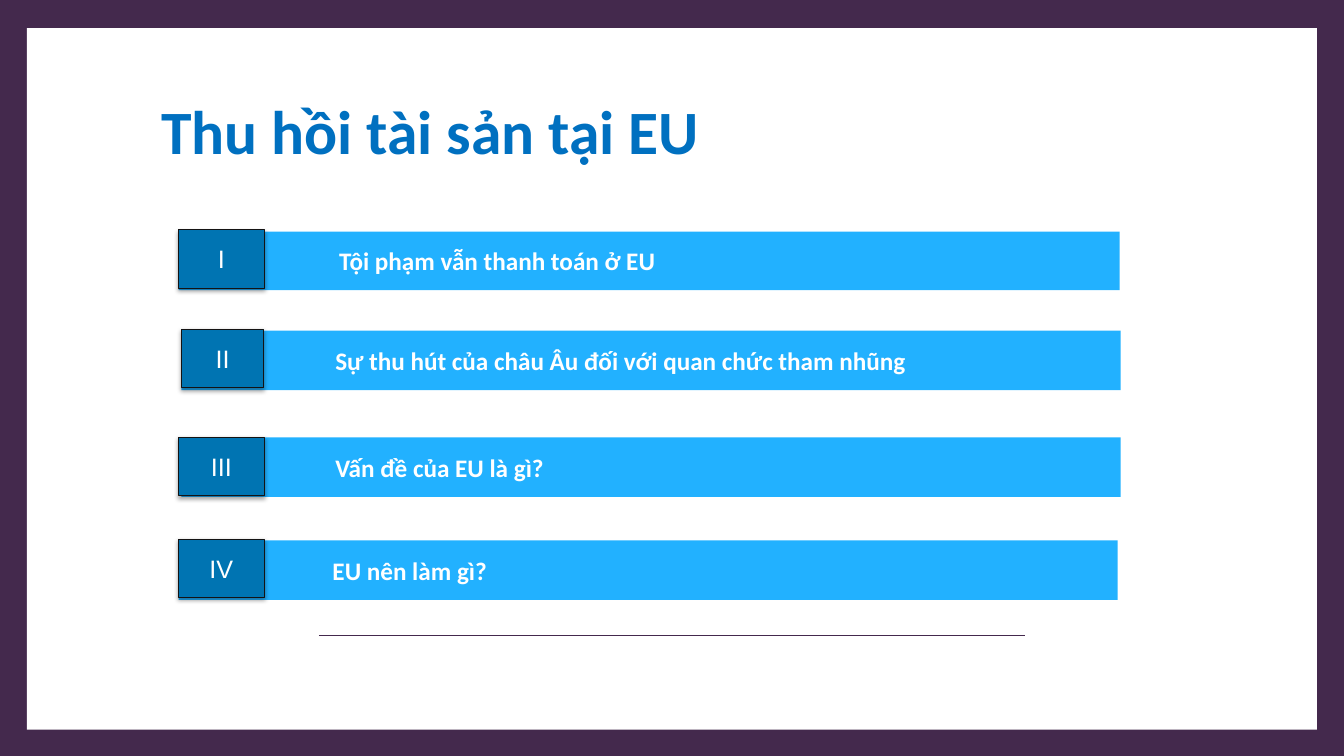
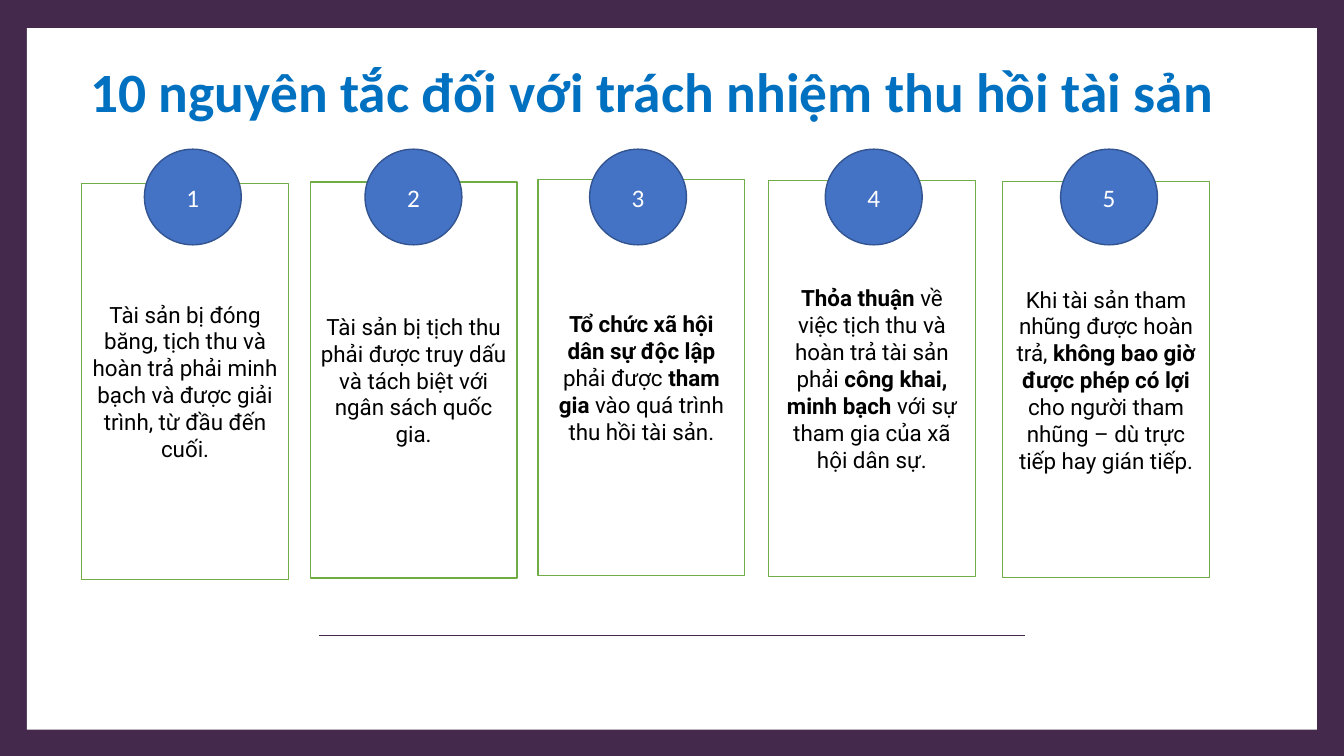
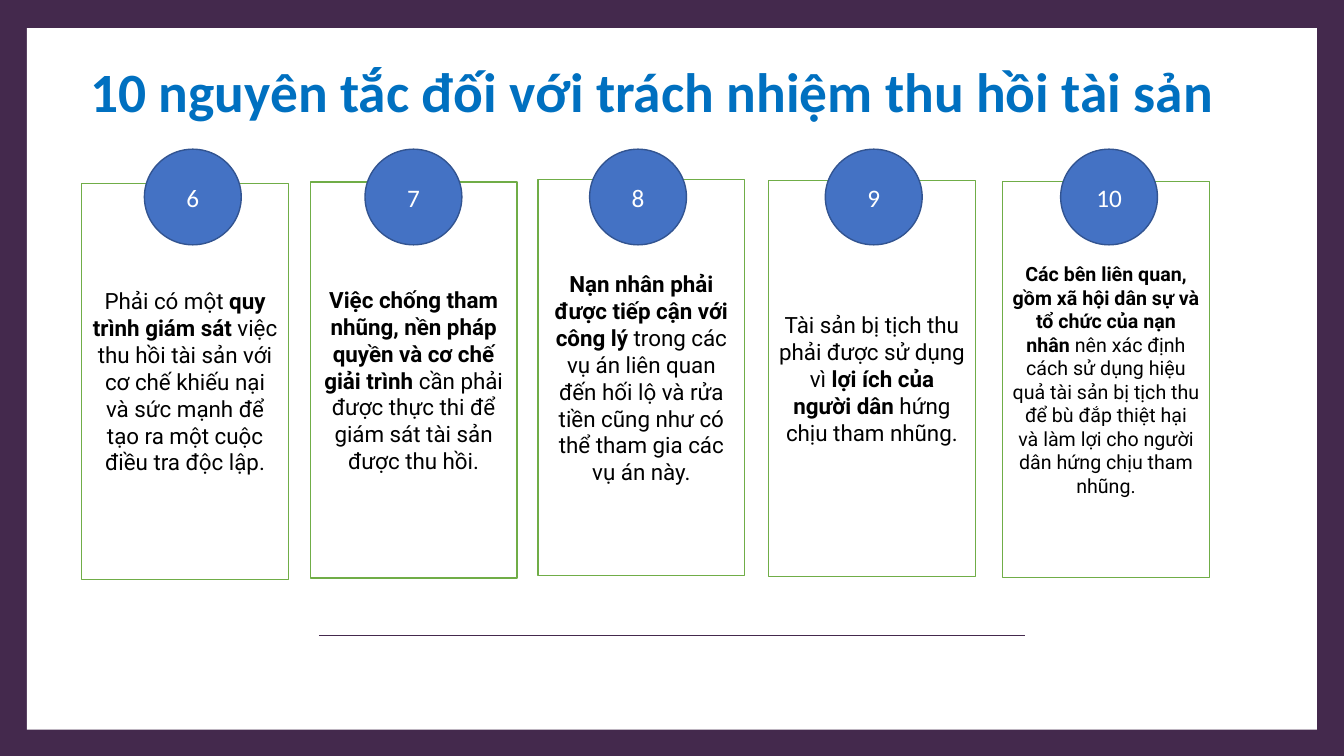
from typing import Any, NamedTuple

from lxml.etree import SubElement
from pptx import Presentation
from pptx.dml.color import RGBColor
from pptx.enum.shapes import MSO_CONNECTOR, MSO_SHAPE
from pptx.enum.text import MSO_ANCHOR as Anchor, PP_ALIGN as Align
from pptx.oxml.ns import qn
from pptx.shapes.autoshape import Shape
from pptx.slide import Slide
from pptx.util import Cm, Pt

PLUM = RGBColor(0x44, 0x29, 0x4D)
WHITE = RGBColor(0xFF, 0xFF, 0xFF)
BLACK = RGBColor(0x00, 0x00, 0x00)
TITLE_BLUE = RGBColor(0x00, 0x70, 0xC0)
BAR_BLUE = RGBColor(0x22, 0xB1, 0xFF)
BADGE_BLUE = RGBColor(0x00, 0x74, 0xB2)
BADGE_EDGE = RGBColor(0x14, 0x13, 0x13)
CIRCLE_BLUE = RGBColor(0x44, 0x72, 0xC4)
CIRCLE_EDGE = RGBColor(0x32, 0x54, 0x91)
CARD_GREEN = RGBColor(0x70, 0xAD, 0x47)

SLIDE_WIDTH, SLIDE_HEIGHT = 33.87, 19.05
CARD_WIDTH, CARD_HEIGHT = 5.21, 9.98
CIRCLE_TOP, CIRCLE_WIDTH, CIRCLE_HEIGHT = 3.76, 2.44, 2.41
BADGE_HEIGHT = 1.47


class Box(NamedTuple):
    """A rectangle in centimetres."""
    left: float
    top: float
    width: float
    height: float


class TextStyle(NamedTuple):
    font: dict[str, Any]
    color: RGBColor
    align: Align = Align.CENTER


class AgendaItem(NamedTuple):
    numeral: str
    topic: str
    bar: Box
    indent: float
    badge_left: float
    badge_top: float
    badge_width: float = 2.16


class CardPlace(NamedTuple):
    left: float
    top: float
    circle_left: float


class Principle(NamedTuple):
    """A principle whose text marks bold parts with asterisks."""
    text: str
    size: int = 16


AGENDA_TITLE = TextStyle({"name": "Calibri", "size": Pt(44), "bold": True}, TITLE_BLUE, Align.LEFT)
PRINCIPLES_TITLE = TextStyle({"name": "Calibri", "size": Pt(39.6), "bold": True}, TITLE_BLUE)
TOPIC = TextStyle({"name": "Calibri", "size": Pt(18), "bold": True}, WHITE, Align.LEFT)
NUMERAL = TextStyle({"name": "Arial", "size": Pt(18)}, WHITE)
NUMBER = TextStyle({"name": "Calibri", "size": Pt(18)}, WHITE)

AGENDA = [
    AgendaItem("I", "Tội phạm vẫn thanh toán ở EU", Box(4.5, 5.84, 23.72, 1.47), 4.05, 4.5, 5.79),
    AgendaItem("II", "Sự thu hút của châu Âu đối với quan chức tham nhũng",
               Box(4.57, 8.33, 23.67, 1.5), 3.88, 4.57, 8.3, 2.08),
    AgendaItem("III", "Vấn đề của EU là gì?", Box(4.57, 11.02, 23.67, 1.5), 3.88, 4.5, 11.02),
    AgendaItem("IV", "EU nên làm gì?", Box(4.5, 13.62, 23.67, 1.5), 3.88, 4.5, 13.59),
]

CARD_PLACES = [
    CardPlace(2.06, 4.62, 3.64),
    CardPlace(7.82, 4.59, 9.2),
    CardPlace(13.56, 4.53, 14.86),
    CardPlace(19.37, 4.55, 20.8),
    CardPlace(25.27, 4.58, 26.73),
]

PRINCIPLES = [
    Principle("Tài sản bị đóng băng, tịch thu và hoàn trả phải minh bạch và được giải trình, "
              "từ đầu đến cuối."),
    Principle("Tài sản bị tịch thu phải được truy dấu và tách biệt với ngân sách quốc gia."),
    Principle("*Tổ chức xã hội dân sự độc lập *phải được *tham gia *vào quá trình thu hồi tài sản."),
    Principle("*Thỏa thuận *về việc tịch thu và hoàn trả tài sản phải *công khai, minh bạch* "
              "với sự tham gia của xã hội dân sự."),
    Principle("Khi tài sản tham nhũng được hoàn trả, *không bao giờ được phép có lợi *"
              "cho người tham nhũng – dù trực tiếp hay gián tiếp."),
    Principle("Phải có một *quy trình giám sát *việc thu hồi tài sản với cơ chế khiếu nại "
              "và sức mạnh để tạo ra một cuộc điều tra độc lập."),
    Principle("*Việc chống tham nhũng, nền pháp quyền và cơ chế giải trình* cần phải được "
              "thực thi để giám sát tài sản được thu hồi."),
    Principle("*Nạn nhân phải được tiếp cận với công lý* trong các vụ án liên quan đến hối lộ "
              "và rửa tiền cũng như có thể tham gia các vụ án này."),
    Principle("Tài sản bị tịch thu phải được sử dụng vì *lợi ích của người dân *"
              "hứng chịu tham nhũng."),
    Principle("*Các bên liên quan, gồm xã hội dân sự và tổ chức của nạn nhân *nên xác định "
              "cách sử dụng hiệu quả tài sản bị tịch thu để bù đắp thiệt hại và làm lợi "
              "cho người dân hứng chịu tham nhũng.", 14),
]


def in_cm(box: Box) -> list[Cm]:
    return [Cm(length) for length in box]


def set_format(target: Any, values: dict[str, Any]) -> None:
    for attribute, value in values.items():
        setattr(target, attribute, value)


def write(holder: Shape, text: str, style: TextStyle, anchor: Anchor = Anchor.MIDDLE,
          line_spacing: float = 1.0) -> None:
    """Write one paragraph; parts between asterisks become bold."""
    set_format(holder.text_frame, {"word_wrap": True, "vertical_anchor": anchor})
    paragraph = holder.text_frame.paragraphs[0]
    set_format(paragraph, {"alignment": style.align, "line_spacing": line_spacing})
    for index, part in enumerate(text.split("*")):
        if part:
            run = paragraph.add_run()
            run.text = part
            set_format(run.font, {"bold": index % 2 == 1} | style.font)
            run.font.color.rgb = style.color


def add_block(slide: Slide, box: Box, fill: RGBColor, edge: RGBColor | None = None,
              edge_width: float = 1, kind: MSO_SHAPE = MSO_SHAPE.RECTANGLE) -> Shape:
    block = slide.shapes.add_shape(kind, *in_cm(box))
    block.shadow.inherit = False
    block.fill.solid()
    block.fill.fore_color.rgb = fill
    if edge is None:
        block.line.fill.background()
    else:
        block.line.color.rgb = edge
        block.line.width = Pt(edge_width)
    return block


def add_soft_shadow(block: Shape) -> None:
    effects = block._element.spPr.find(qn("a:effectLst"))
    shadow = SubElement(effects, qn("a:outerShdw"), blurRad="40000", dist="23000",
                        dir="5400000", rotWithShape="0")
    color = SubElement(shadow, qn("a:srgbClr"), val=str(BLACK))
    SubElement(color, qn("a:alpha"), val="35000")


def add_framed_slide(deck: Any, title: str, title_box: Box, style: TextStyle,
                     anchor: Anchor) -> Slide:
    """Add a slide with the plum frame, the footer rule and a title."""
    slide = deck.slides.add_slide(deck.slide_layouts[6])
    add_block(slide, Box(0, 0, SLIDE_WIDTH, SLIDE_HEIGHT), PLUM)
    add_block(slide, Box(0.68, 0.71, 32.51, 17.68), WHITE)
    rule = slide.shapes.add_connector(MSO_CONNECTOR.STRAIGHT, Cm(8.04), Cm(16.02),
                                      Cm(25.83), Cm(16.02))
    rule.line.color.rgb = PLUM
    rule.line.width = Pt(0.5)
    SubElement(rule._element.spPr, qn("a:effectLst"))
    heading = slide.shapes.add_textbox(*in_cm(title_box))
    write(heading, title, style, anchor, 0.9)
    return slide


def add_agenda_item(slide: Slide, item: AgendaItem) -> None:
    bar = add_block(slide, item.bar, BAR_BLUE)
    set_format(bar.text_frame, {"margin_left": Cm(item.indent), "margin_right": Cm(0.18),
                                "margin_top": Cm(0.1), "margin_bottom": Cm(0.1)})
    write(bar, item.topic, TOPIC)
    badge_box = Box(item.badge_left, item.badge_top, item.badge_width, BADGE_HEIGHT)
    badge = add_block(slide, badge_box, BADGE_BLUE, BADGE_EDGE, 0.75)
    add_soft_shadow(badge)
    write(badge, item.numeral, NUMERAL)


def add_principle(slide: Slide, place: CardPlace, number: int, principle: Principle) -> None:
    card = add_block(slide, Box(place.left, place.top, CARD_WIDTH, CARD_HEIGHT),
                     WHITE, CARD_GREEN)
    write(card, principle.text,
          TextStyle({"name": "Roboto", "size": Pt(principle.size)}, BLACK))
    circle_box = Box(place.circle_left, CIRCLE_TOP, CIRCLE_WIDTH, CIRCLE_HEIGHT)
    circle = add_block(slide, circle_box, CIRCLE_BLUE, CIRCLE_EDGE, kind=MSO_SHAPE.OVAL)
    write(circle, str(number), NUMBER)


def main() -> None:
    deck = Presentation()
    set_format(deck, {"slide_width": Cm(SLIDE_WIDTH), "slide_height": Cm(SLIDE_HEIGHT)})

    agenda_slide = add_framed_slide(deck, "Thu hồi tài sản tại EU",
                                    Box(3.81, 1.55, 30.4, 3.68), AGENDA_TITLE, Anchor.MIDDLE)
    for item in AGENDA:
        add_agenda_item(agenda_slide, item)

    per_slide = len(CARD_PLACES)
    for start in range(0, len(PRINCIPLES), per_slide):
        slide = add_framed_slide(deck, "10 nguyên tắc đối với trách nhiệm thu hồi tài sản",
                                 Box(1.24, 1.09, 30.4, 2.18), PRINCIPLES_TITLE, Anchor.BOTTOM)
        group = PRINCIPLES[start:start + per_slide]
        for number, (place, principle) in enumerate(zip(CARD_PLACES, group), start + 1):
            add_principle(slide, place, number, principle)

    deck.save("out.pptx")


if __name__ == "__main__":
    main()
